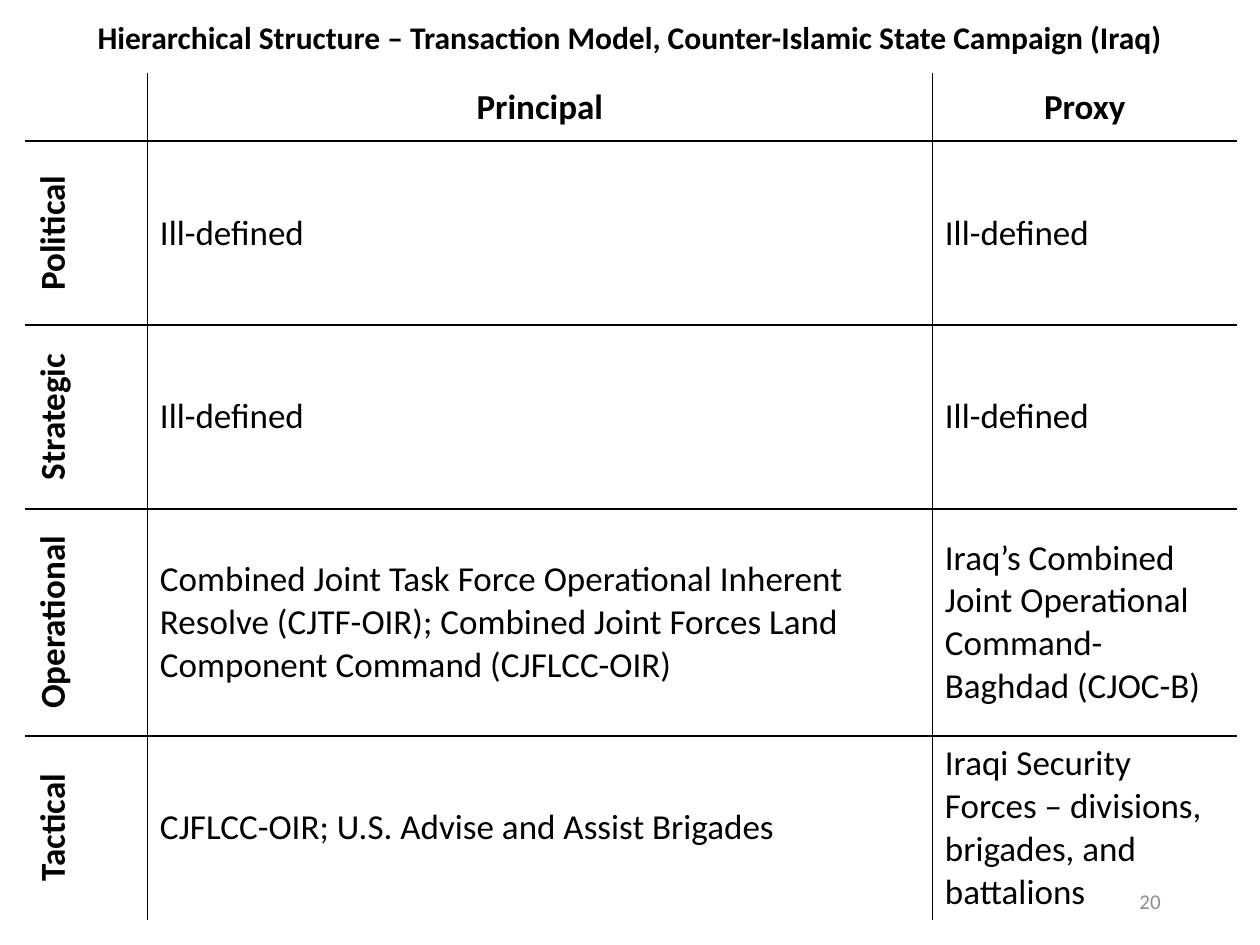
from typing import NamedTuple

from lxml import etree
from pptx import Presentation
from pptx.dml.color import RGBColor
from pptx.enum.text import MSO_ANCHOR, PP_ALIGN
from pptx.oxml.ns import qn
from pptx.util import Inches, Pt

MIDDLE = MSO_ANCHOR.MIDDLE
LEFT, CENTER, RIGHT = PP_ALIGN.LEFT, PP_ALIGN.CENTER, PP_ALIGN.RIGHT
FONT = "Calibri"
COLORS = {"ink": "000000", "muted": "8C8C8C"}
COL_WIDTHS = [0.97, 6.23, 2.42]
ROW_HEIGHTS = [0.54, 1.46, 1.46, 1.8, 1.46]


class Level(NamedTuple):
    name: str
    principal: str
    proxy: str


LEVELS = [
    Level("", "Principal", "Proxy"),
    Level("Political", "Ill-defined", "Ill-defined"),
    Level("Strategic", "Ill-defined", "Ill-defined"),
    Level(
        "Operational",
        "Combined Joint Task Force Operational Inherent Resolve (CJTF-OIR); "
        "Combined Joint Forces Land Component Command (CJFLCC-OIR)",
        "Iraq’s Combined Joint Operational Command-Baghdad (CJOC-B)",
    ),
    Level(
        "Tactical",
        "CJFLCC-OIR; U.S. Advise and Assist Brigades",
        "Iraqi Security Forces – divisions, brigades, and battalions",
    ),
]


def write(tf, text, *, size=20, bold=False, color="ink", align=LEFT) -> None:
    p = tf.paragraphs[0]
    p.alignment = align
    p.font.size = Pt(size)
    if not text:
        return
    r = p.add_run()
    r.text = text
    r.font.name = FONT
    r.font.size = Pt(size)
    r.font.bold = bold
    r.font.color.rgb = RGBColor.from_string(COLORS[color])


def add_text(slide, left: float, top: float, width: float, height: float,
             text: str, **style) -> None:
    box = slide.shapes.add_textbox(
        Inches(left), Inches(top), Inches(width), Inches(height))
    tf = box.text_frame
    tf.word_wrap = True
    tf.vertical_anchor = MIDDLE
    write(tf, text, **style)


def set_borders(cell, row: int, col: int) -> None:
    inner = {
        "a:lnL": col > 0,
        "a:lnR": col < len(COL_WIDTHS) - 1,
        "a:lnT": row > 0,
        "a:lnB": row < len(ROW_HEIGHTS) - 1,
    }
    tc_pr = cell._tc.get_or_add_tcPr()
    for tag, visible in inner.items():
        ln = etree.SubElement(tc_pr, qn(tag), w=str(Pt(1)))
        if visible:
            fill = etree.SubElement(ln, qn("a:solidFill"))
            etree.SubElement(fill, qn("a:srgbClr"), val=COLORS["ink"])
        else:
            etree.SubElement(ln, qn("a:noFill"))


def add_levels_table(slide) -> None:
    table = slide.shapes.add_table(
        len(ROW_HEIGHTS), len(COL_WIDTHS), Inches(0.2), Inches(0.58),
        Inches(sum(COL_WIDTHS)), Inches(sum(ROW_HEIGHTS))).table
    table.first_row = False
    table.horz_banding = False
    for column, width in zip(table.columns, COL_WIDTHS):
        column.width = Inches(width)
    for row, height in zip(table.rows, ROW_HEIGHTS):
        row.height = Inches(height)
    for i, level in enumerate(LEVELS):
        for j, text in enumerate(level):
            cell = table.cell(i, j)
            heading = i == 0 or j == 0
            set_borders(cell, i, j)
            cell.fill.background()
            cell.vertical_anchor = MIDDLE
            if i > 0 and j == 0:
                cell._tc.get_or_add_tcPr().set("vert", "vert270")
            write(cell.text_frame, text, bold=heading,
                  align=CENTER if heading else LEFT)


def main() -> None:
    prs = Presentation()
    prs.slide_width = Inches(10)
    prs.slide_height = Inches(7.5)
    s = prs.slides.add_slide(prs.slide_layouts[6])
    add_text(s, 0, 0, 10, 0.58,
             "Hierarchical Structure – Transaction Model, "
             "Counter-Islamic State Campaign (Iraq)",
             size=18, bold=True, align=CENTER)
    add_levels_table(s)
    add_text(s, 7.06, 6.95, 2.25, 0.4, "20", size=12, color="muted", align=RIGHT)
    prs.save("out.pptx")


if __name__ == "__main__":
    main()
